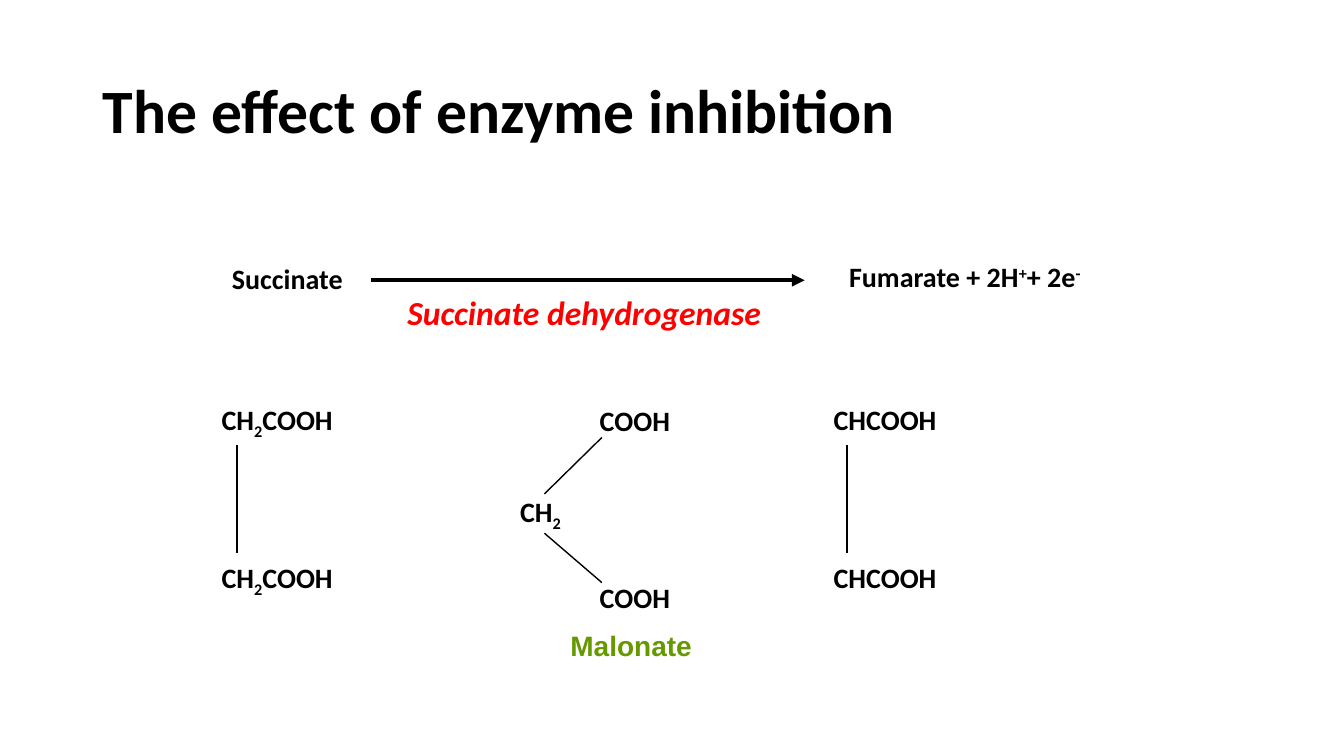
from lxml import etree
from pptx import Presentation, util as u
from pptx.dml.color import RGBColor
from pptx.enum import shapes, text
from pptx.oxml import ns

COLORS = {"ink": "000000", "enzyme": "FF0000", "inhibitor": "669900"}
CH2 = [("CH", 0), ("2", -25)]
CENTER = text.PP_ALIGN.CENTER


def add_runs(paragraph, runs, size=20, color="ink", font="Calibri", italic=False):
    """Add bold (text, baseline percent) runs to a paragraph."""
    for content, baseline in runs:
        run = paragraph.add_run()
        run.text = content
        run.font.name = font
        run.font.size = u.Pt(size)
        run.font.bold = True
        run.font.italic = italic
        run.font.color.rgb = RGBColor.from_string(COLORS[color])
        if baseline:
            run._r.get_or_add_rPr().set("baseline", str(baseline * 1000))


def add_label(parent, box, runs, align=text.PP_ALIGN.LEFT, **style):
    """Place a one-line label in a box of left, top, width, height."""
    frame = parent.add_textbox(*map(u.Inches, box)).text_frame
    frame.word_wrap = True
    paragraph = frame.paragraphs[0]
    paragraph.alignment = align
    add_runs(paragraph, runs, **style)


def add_line(parent, start, end, width=1, arrow=False):
    """Draw a straight line, with an arrowhead at its end if asked."""
    line = parent.add_connector(shapes.MSO_CONNECTOR.STRAIGHT, *map(u.Inches, start + end))
    line.line.color.rgb = RGBColor.from_string(COLORS["ink"])
    line.line.width = u.Pt(width)
    if arrow:
        etree.SubElement(line.line._get_or_add_ln(), ns.qn("a:tailEnd"), type="triangle")
    etree.SubElement(line._element.spPr, ns.qn("a:effectLst"))


def add_title(slide, box):
    """Format the title placeholder in its box."""
    title = slide.shapes.title
    title.left, title.top, title.width, title.height = map(u.Inches, box)
    frame = title.text_frame
    frame.word_wrap = True
    frame.auto_size = text.MSO_AUTO_SIZE.NONE
    frame.vertical_anchor = text.MSO_ANCHOR.MIDDLE
    paragraph = frame.paragraphs[0]
    paragraph.alignment = text.PP_ALIGN.LEFT
    paragraph.line_spacing = 0.9
    add_runs(paragraph, [("The effect of enzyme inhibition", 0)], size=44)


def add_reaction(slide, left, top):
    """Write the reaction along an arrow with its enzyme below."""
    parent = slide.shapes
    add_label(parent, (left, top, 1.48, 0.44), [("Succinate", 0)], CENTER)
    add_line(parent, (left + 1.57, top + 0.23), (left + 5.87, top + 0.23), 3, arrow=True)
    add_label(parent, (left + 1.65, top + 0.3, 4.07, 0.58),
              [("Succinate dehydrogenase", 0)], CENTER,
              size=24, color="enzyme", italic=True)
    products = [("Fumarate + 2H", 0), ("+", 30), ("+ 2e", 0), ("-", 30)]
    add_label(parent, (left + 5.99, top - 0.02, 2.94, 0.44), products, CENTER)


def add_two_part_acid(slide, left, top, runs, bond):
    """Join two equal formulas by an upright bond at an offset from the left."""
    parent = slide.shapes.add_group_shape().shapes
    for offset in (0, 1.57):
        add_label(parent, (left, top + offset, 1.7, 0.45), runs)
    add_line(parent, (left + bond, top + 0.47), (left + bond, top + 1.55))


def add_malonate(slide, left, top):
    """Draw malonate as a bent chain with its name below."""
    parent = slide.shapes.add_group_shape().shapes
    for offset in (0, 1.76):
        add_label(parent, (left + 0.79, top + offset, 1.26, 0.44), [("COOH", 0)])
    add_label(parent, (left, top + 0.91, 0.95, 0.47), CH2)
    for outer, inner in ((0.39, 0.95), (1.83, 1.34)):
        add_line(parent, (left + 0.91, top + outer), (left + 0.34, top + inner))
    add_label(parent, (left + 0.18, top + 2.24, 2.04, 0.43), [("Malonate", 0)], CENTER,
              color="inhibitor", font="Arial")


def main():
    """Build and save the slide."""
    presentation = Presentation()
    presentation.slide_width = u.Inches(13.33)
    presentation.slide_height = u.Inches(7.5)
    slide = presentation.slides.add_slide(presentation.slide_layouts[5])
    add_title(slide, (0.92, 0.4, 11.5, 1.45))
    add_reaction(slide, 2.11, 2.55)
    add_two_part_acid(slide, 2.1, 3.94, CH2 + [("COOH", 0)], 0.25)
    add_two_part_acid(slide, 8.17, 3.94, [("CHCOOH", 0)], 0.23)
    add_malonate(slide, 5.06, 3.95)
    presentation.save("out.pptx")


if __name__ == "__main__":
    main()
